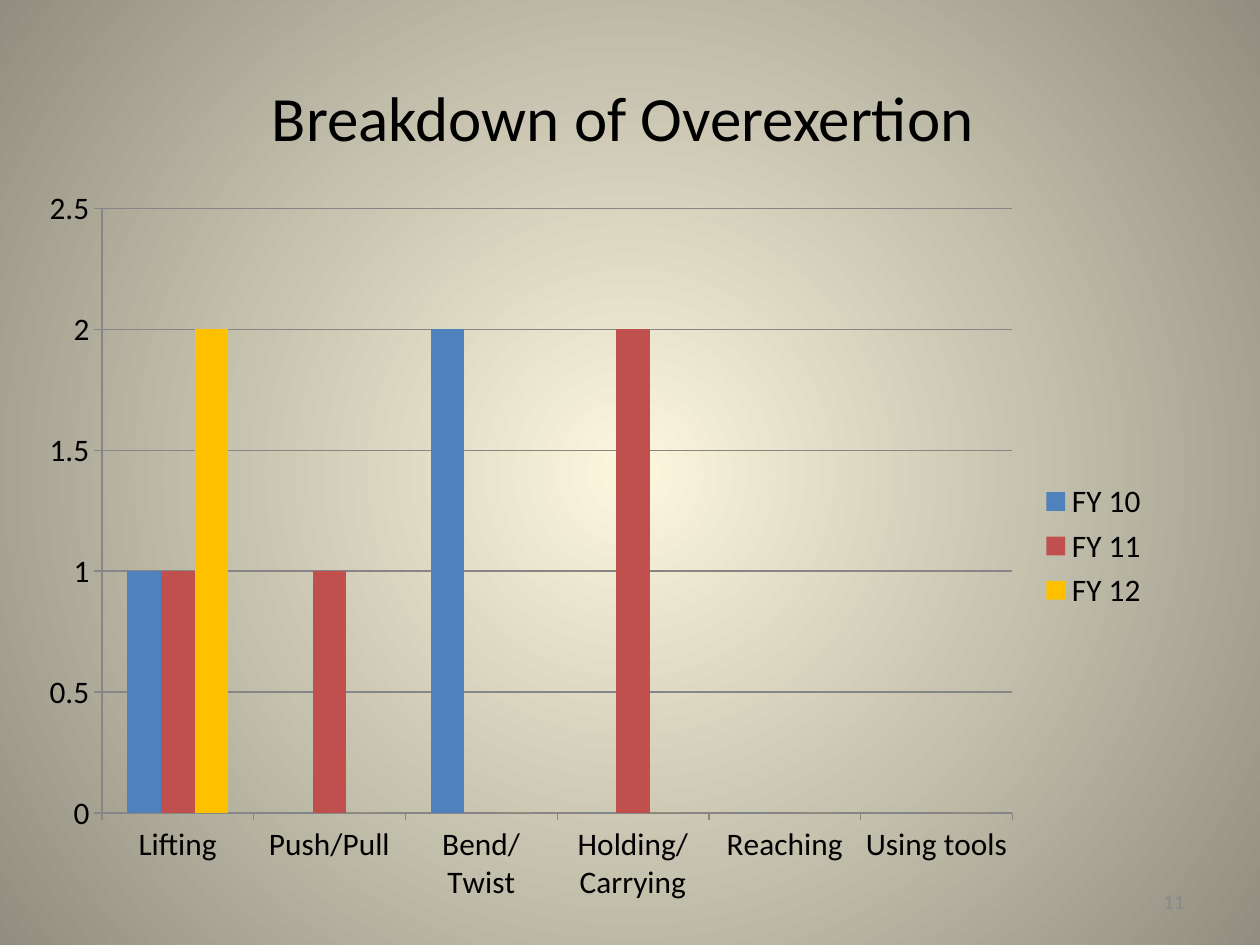
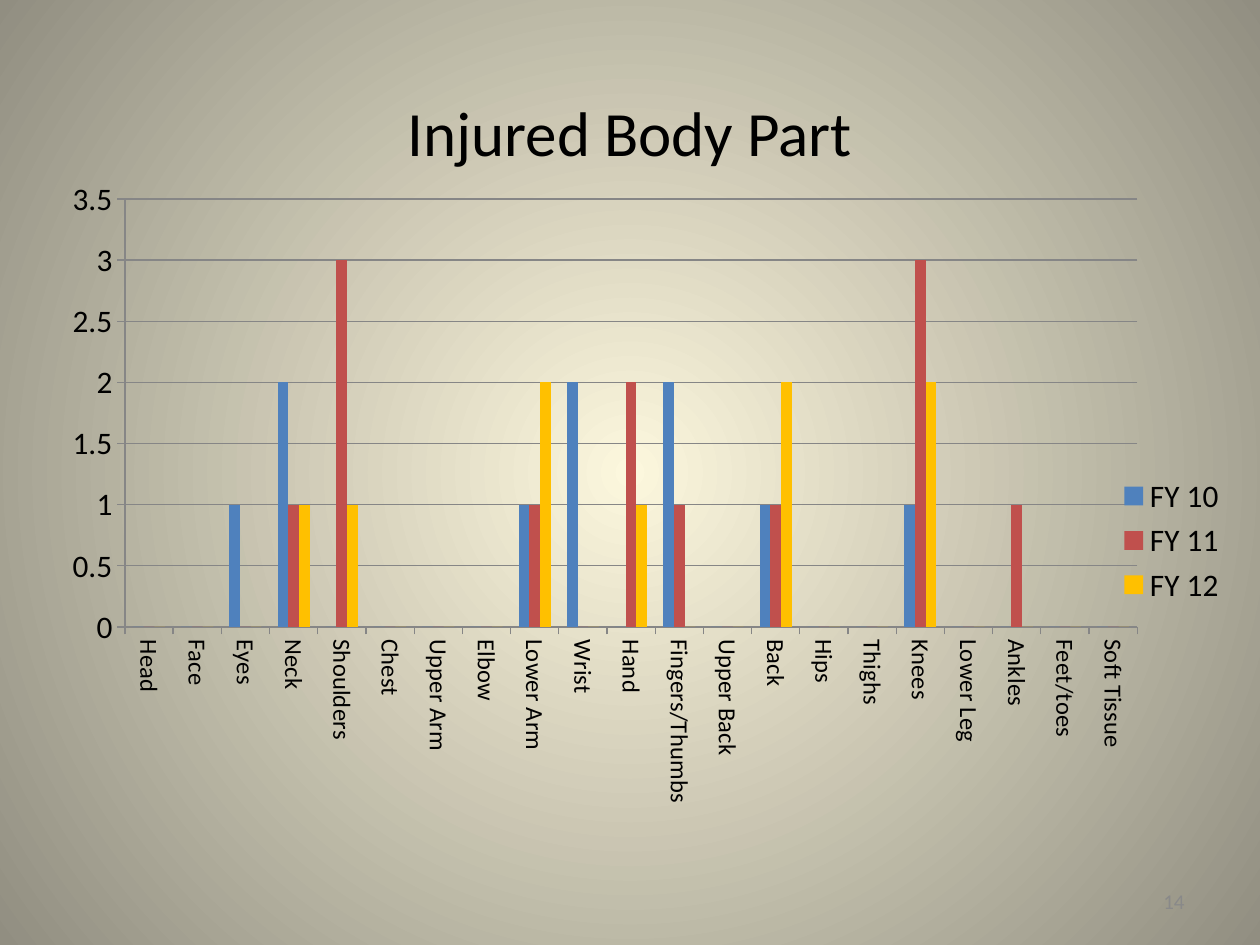
import lxml.etree
import pptx
import pptx.chart.data
import pptx.dml.color
import pptx.enum.chart
import pptx.enum.text
import pptx.oxml.ns
import pptx.util

Pt = pptx.util.Pt
RGB = pptx.dml.color.RGBColor
qn = pptx.oxml.ns.qn

FONT = "Calibri"
BLACK = RGB(0x00, 0x00, 0x00)
GRID_GREY = RGB(0x86, 0x86, 0x86)
NUMBER_GREY = RGB(0x89, 0x89, 0x89)
GLOW_CENTRE = RGB(0xFC, 0xF7, 0xDD)
GLOW_EDGE = RGB(0x91, 0x8E, 0x81)
YEAR_COLOURS = {
    "FY 10": RGB(0x4F, 0x81, 0xBD),
    "FY 11": RGB(0xC0, 0x50, 0x4D),
    "FY 12": RGB(0xFF, 0xC0, 0x00),
}

# Injuries per category, one count for each fiscal year
OVEREXERTION = {
    "Lifting": (1, 1, 2),
    "Push/Pull": (0, 1, 0),
    "Bend/Twist": (2, 0, 0),
    "Holding/Carrying": (0, 2, 0),
    "Reaching": (0, 0, 0),
    "Using tools": (0, 0, 0),
}
BODY_PARTS = {
    "Head": (0, 0, 0),
    "Face": (0, 0, 0),
    "Eyes": (1, 0, 0),
    "Neck": (2, 1, 1),
    "Shoulders": (0, 3, 1),
    "Chest": (0, 0, 0),
    "Upper Arm": (0, 0, 0),
    "Elbow": (0, 0, 0),
    "Lower Arm": (1, 1, 2),
    "Wrist": (2, 0, 0),
    "Hand": (0, 2, 1),
    "Fingers/Thumbs": (2, 1, 0),
    "Upper Back": (0, 0, 0),
    "Back": (1, 1, 2),
    "Hips": (0, 0, 0),
    "Thighs": (0, 0, 0),
    "Knees": (1, 3, 2),
    "Lower Leg": (0, 0, 0),
    "Ankles": (0, 1, 0),
    "Feet/toes": (0, 0, 0),
    "Soft Tissue": (0, 0, 0),
}


def set_font(font, size, colour):
    font.name = FONT
    font.size = Pt(size)
    font.color.rgb = colour


def set_background(master):
    """Give every slide a glow that darkens from the centre outwards."""
    fill = master.background.fill
    fill.gradient()
    for stop, colour in zip(fill.gradient_stops, (GLOW_CENTRE, GLOW_EDGE)):
        stop.color.rgb = colour
    grad = master.element.find(".//" + qn("p:bg")).find(".//" + qn("a:gradFill"))
    for position, gs in zip((0, 100000), grad.iter(qn("a:gs"))):
        gs.set("pos", str(position))
    lin = grad.find(qn("a:lin"))
    circle = lxml.etree.Element(qn("a:path"), {"path": "circle"})
    centre = dict.fromkeys("ltrb", "50000")
    lxml.etree.SubElement(circle, qn("a:fillToRect"), centre)
    grad.replace(lin, circle)


def add_text(tf, text, size, colour, align):
    tf.word_wrap = True
    tf.vertical_anchor = pptx.enum.text.MSO_ANCHOR.MIDDLE
    p = tf.paragraphs[0]
    p.alignment = align
    r = p.add_run()
    r.text = text
    set_font(r.font, size, colour)


def add_titled_slide(prs, title, title_top, number):
    s = prs.slides.add_slide(prs.slide_layouts[5])
    sp = s.shapes.title
    sp.left, sp.top, sp.width, sp.height = Pt(36), Pt(title_top), Pt(648), Pt(90)
    add_text(sp.text_frame, title, 36, BLACK, pptx.enum.text.PP_ALIGN.CENTER)
    box = s.shapes.add_textbox(Pt(516), Pt(500.5), Pt(168), Pt(28.75))
    add_text(box.text_frame, number, 12, NUMBER_GREY, pptx.enum.text.PP_ALIGN.RIGHT)
    return s


def set_plot_area(chart, percents):
    """Fix the inner plot area: x, y, width, height in percent of the chart."""
    area = chart.element.find(".//" + qn("c:plotArea"))
    for old in area.findall(qn("c:layout")):
        area.remove(old)
    layout = lxml.etree.Element(qn("c:layout"))
    manual = lxml.etree.SubElement(layout, qn("c:manualLayout"))
    settings = [("layoutTarget", "inner"), ("xMode", "edge"), ("yMode", "edge")]
    settings += [(key, str(value / 100)) for key, value in zip("xywh", percents)]
    for tag, value in settings:
        lxml.etree.SubElement(manual, qn("c:" + tag), val=value)
    area.insert(0, layout)


def style_line(line):
    line.color.rgb = GRID_GREY
    line.width = Pt(0.75)


def style_axes(chart, top_value, label_size, vertical_labels):
    cat, val = chart.category_axis, chart.value_axis
    for axis in (cat, val):
        axis.major_tick_mark = pptx.enum.chart.XL_TICK_MARK.OUTSIDE
        style_line(axis.format.line)
    val.minimum_scale, val.maximum_scale, val.major_unit = 0, top_value, 0.5
    val.has_major_gridlines = True
    style_line(val.major_gridlines.format.line)
    set_font(cat.tick_labels.font, label_size, BLACK)
    if vertical_labels:
        body = cat._element.find(qn("c:txPr")).find(qn("a:bodyPr"))
        body.set("rot", "5400000")
        body.set("vert", "horz")


def add_injury_chart(s, counts, box, plot, top_value, label_size=17.9,
                     vertical_labels=False):
    data = pptx.chart.data.CategoryChartData()
    data.categories = list(counts)
    for year, values in zip(YEAR_COLOURS, zip(*counts.values())):
        data.add_series(year, values)
    kind = pptx.enum.chart.XL_CHART_TYPE.COLUMN_CLUSTERED
    chart = s.shapes.add_chart(kind, *map(Pt, box), data).chart
    set_font(chart.font, 17.9, BLACK)
    chart.has_title = False
    chart.has_legend = True
    chart.legend.position = pptx.enum.chart.XL_LEGEND_POSITION.RIGHT
    chart.legend.include_in_layout = False
    bars = chart.plots[0]
    bars.gap_width, bars.overlap = 150, 0
    bars.vary_by_categories = False
    for series in bars.series:
        series.format.fill.solid()
        series.format.fill.fore_color.rgb = YEAR_COLOURS[series.name]
    style_axes(chart, top_value, label_size, vertical_labels)
    set_plot_area(chart, plot)


def main():
    prs = pptx.Presentation()
    prs.slide_width, prs.slide_height = Pt(720), Pt(540)
    set_background(prs.slide_master)

    s = add_titled_slide(prs, "Breakdown of Overexertion ", 21.6, "11")
    add_injury_chart(s, OVEREXERTION, (15.8, 100, 648, 424),
                     (6.55, 4.5, 80.3, 81.5), 2.5)

    s = add_titled_slide(prs, "Injured Body Part", 30.2, "14")
    add_injury_chart(s, BODY_PARTS, (12.2, 95.8, 696.2, 426.2),
                     (8.5, 4.2, 83.1, 57.4), 3.5,
                     label_size=14, vertical_labels=True)

    prs.save("out.pptx")


if __name__ == "__main__":
    main()
